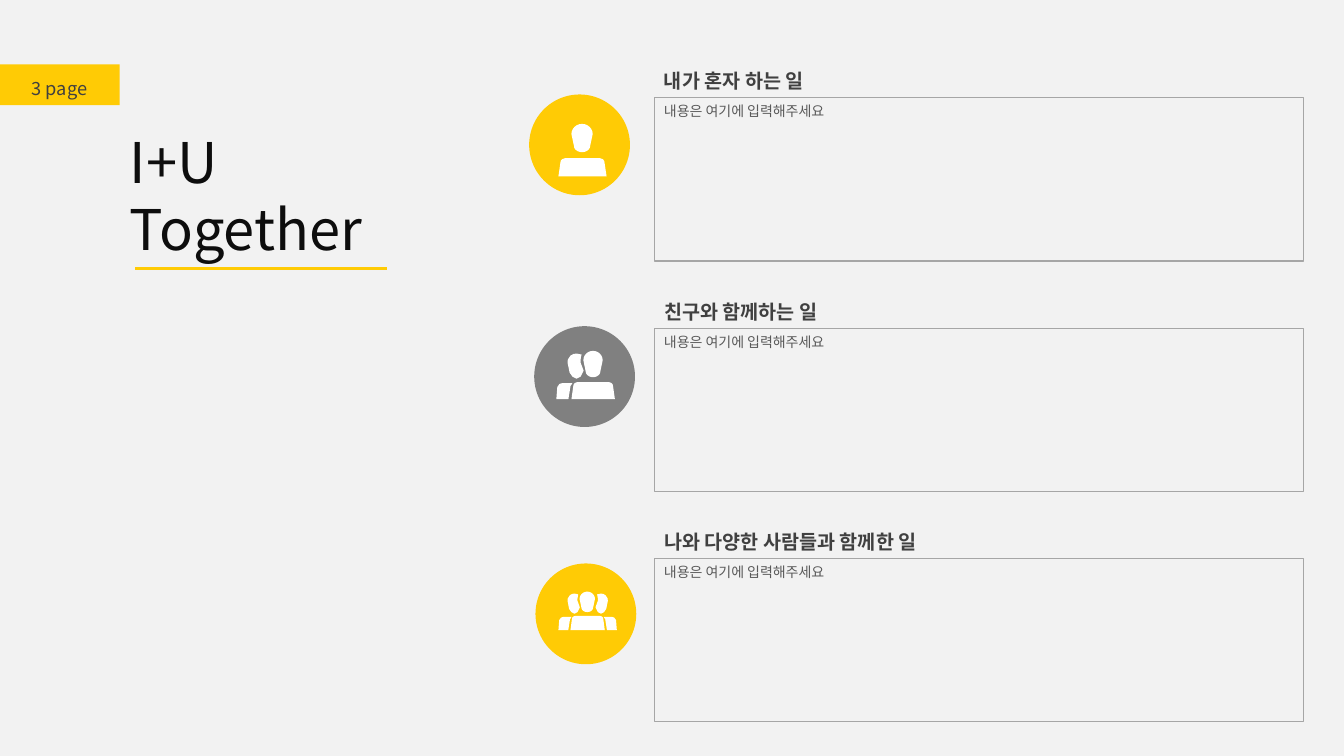
from math import cos, radians, sin

from lxml import etree
from pptx import Presentation
from pptx.dml.color import RGBColor
from pptx.enum import shapes, text
from pptx.oxml import ns
from pptx.util import Pt

FONT = "Noto Sans CJK KR"
YELLOW, GREY, WHITE = "FFCB05", "808080", "FFFFFF"
rgb = RGBColor.from_string


def paint(shape, fill=None, line=None):
    """Set flat fill and thin outline; None leaves that part empty."""
    shape.shadow.inherit = False
    if fill:
        shape.fill.solid()
        shape.fill.fore_color.rgb = rgb(fill)
    else:
        shape.fill.background()
    if line:
        shape.line.color.rgb = rgb(line)
        shape.line.width = Pt(0.75)
    else:
        shape.line.fill.background()


def write(shape, lines, size, color, bold=False, wrap=True,
          align=text.PP_ALIGN.LEFT, spacing=1.0):
    frame = shape.text_frame
    frame.word_wrap = wrap
    frame.vertical_anchor = text.MSO_ANCHOR.TOP
    for i, line in enumerate(lines):
        paragraph = frame.add_paragraph() if i else frame.paragraphs[0]
        paragraph.alignment = align
        paragraph.line_spacing = spacing
        run = paragraph.add_run()
        run.text = line
        run.font.name = FONT
        run.font.size = Pt(size)
        run.font.bold = bold
        run.font.color.rgb = rgb(color)
        east_asian = etree.SubElement(run.font._element, ns.qn("a:ea"))
        east_asian.set("typeface", FONT)


prs = Presentation()
prs.slide_width, prs.slide_height = Pt(960), Pt(540)
slide = prs.slides.add_slide(prs.slide_layouts[6])
slide.background.fill.solid()
slide.background.fill.fore_color.rgb = rgb("F2F2F2")
canvas = slide.shapes

# Page tab and title
page_tab = canvas.add_shape(shapes.MSO_SHAPE.RECTANGLE, 0, Pt(46), Pt(85.5), Pt(29.2))
paint(page_tab, YELLOW)
page_label = canvas.add_textbox(Pt(15.6), Pt(44), Pt(58.3), Pt(31))
write(page_label, ["3 page"], 13, "404040", spacing=1.5)
title = canvas.add_textbox(Pt(85.7), Pt(87.2), Pt(260.6), Pt(104.4))
write(title, ["I+U", "Together"], 40, "0D0D0D")
underline = canvas.add_connector(shapes.MSO_CONNECTOR.STRAIGHT,
                                 Pt(96.5), Pt(191.6), Pt(276.5), Pt(191.6))
underline.line.color.rgb = rgb(YELLOW)
underline.line.width = Pt(2.25)
etree.SubElement(underline._element.spPr, ns.qn("a:effectLst"))

# Outlines of the figures, in a unit square
HEAD = [(0.5 + 0.5 * cos(radians(a)), 0.36 + 0.36 * sin(radians(a)))
        for a in range(180, 361, 15)]
HEAD += [(0.5 + 0.38 * cos(radians(a)), 0.78 + 0.22 * sin(radians(a)))
         for a in range(0, 181, 15)]
TORSO = [(0, 1), (0.04, 0.28), (0.05, 0.14), (0.08, 0.05), (0.14, 0)]
TORSO += [(1 - x, y) for x, y in reversed(TORSO)]
BACK_HEAD = [(0, 0.36), (0.02, 0.24), (0.19, 0.08), (0.37, 0.02), (0.56, 0),
             (0.87, 0.04), (0.81, 0.24), (0.81, 0.36), (1, 0.68), (0.94, 0.76),
             (0.81, 0.92), (0.56, 1), (0.31, 0.92), (0.13, 0.76)]
BACK_TORSO = [(0, 1), (0.06, 0.25), (0.19, 0.06), (0.38, 0), (1, 0), (0.88, 0.19), (0.75, 1)]

# Heading, circle (left, top, colour), figure parts (outline, left, top, width,
# height); a negative width mirrors the part
SECTIONS = [
    ("내가 혼자 하는 일", 128, (378, 67.5, YELLOW),
     [(HEAD, 408.2, 88.5, 15.2, 20.2), (TORSO, 398.9, 113, 34.4, 13)]),
    ("친구와 함께하는 일", 137.5, (381.6, 233, GREY),
     [(BACK_TORSO, 397.4, 273.6, 11.5, 11.5), (BACK_HEAD, 405.4, 252.5, 11.5, 18),
      (TORSO, 408.2, 272.9, 31, 12.2), (HEAD, 416.7, 250.6, 13.8, 18.8)]),
    ("나와 다양한 사람들과 함께한 일", 218, (382.5, 402.5, YELLOW),
     [(BACK_TORSO, 398.9, 440.6, 9.4, 9.4), (BACK_HEAD, 405.4, 424, 8.8, 14.4),
      (TORSO, 407.5, 439.9, 24.5, 10.1), (HEAD, 414, 422.6, 11, 14.6),
      (BACK_HEAD, 434.2, 424, -8.8, 14.4), (BACK_TORSO, 440.6, 440.6, -9.4, 9.4)]),
]

for i, (heading, width, (left, top, color), parts) in enumerate(SECTIONS):
    box_top = 70 + 164.4 * i
    circle = canvas.add_shape(shapes.MSO_SHAPE.OVAL, Pt(left), Pt(top), Pt(72), Pt(72))
    paint(circle, color)

    figure = None
    for outline, x, y, w, h in parts:
        points = [(Pt(x + w * px), Pt(y + h * py)) for px, py in outline]
        if figure is None:
            figure = canvas.build_freeform(*points[0])
        else:
            figure.move_to(*points[0])
        figure.add_line_segments(points[1:], close=True)
    paint(figure.convert_to_shape(), WHITE)

    heading_box = canvas.add_textbox(Pt(467.2), Pt(box_top - 24), Pt(width), Pt(24.2))
    write(heading_box, [heading], 14, "404040", bold=True, wrap=False)
    entry = canvas.add_shape(shapes.MSO_SHAPE.RECTANGLE,
                             Pt(467.2), Pt(box_top), Pt(463.8), Pt(116.5))
    paint(entry, line="A6A6A6")
    write(entry, ["내용은 여기에 입력해주세요"], 10, "595959", align=text.PP_ALIGN.JUSTIFY)

prs.save("out.pptx")
